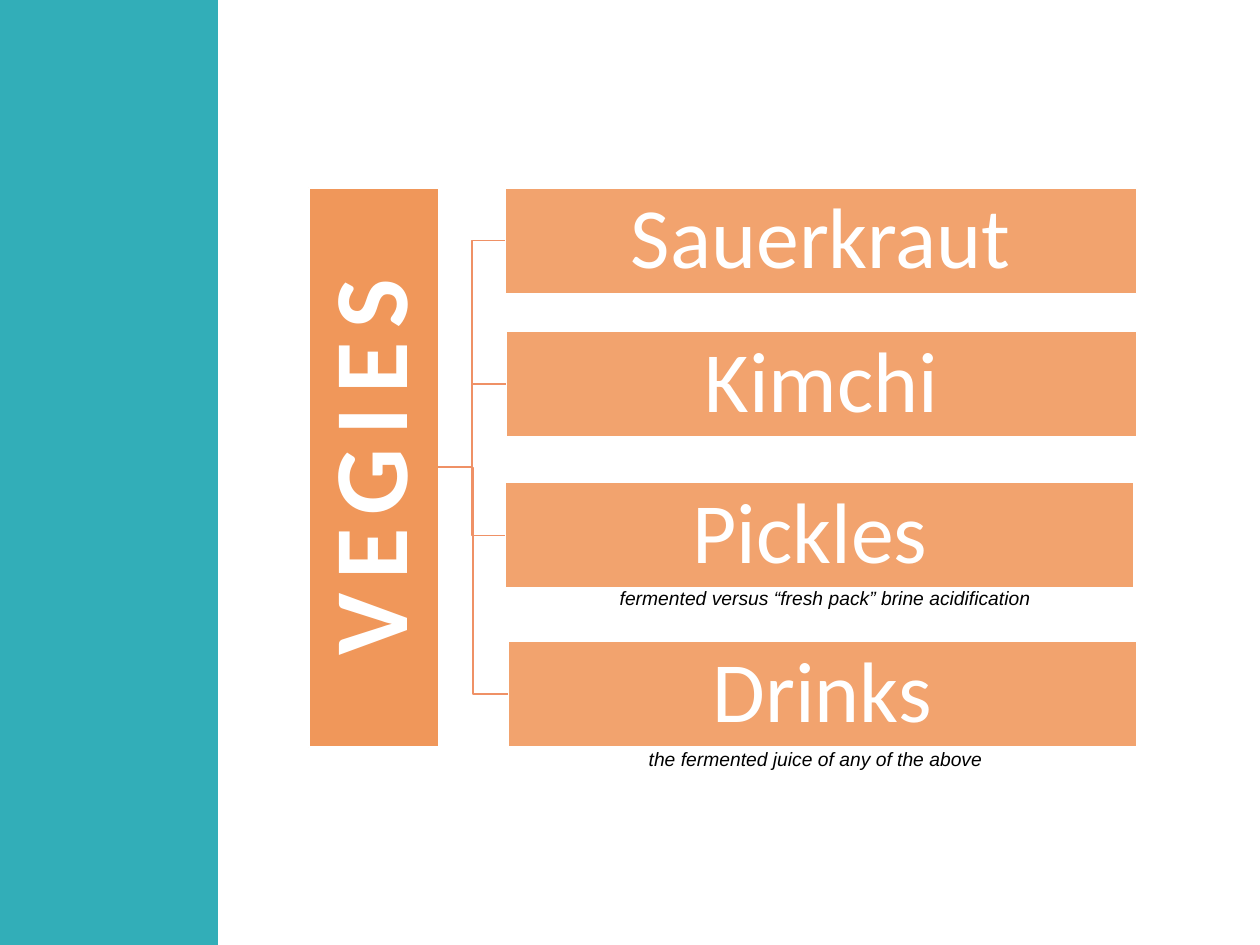
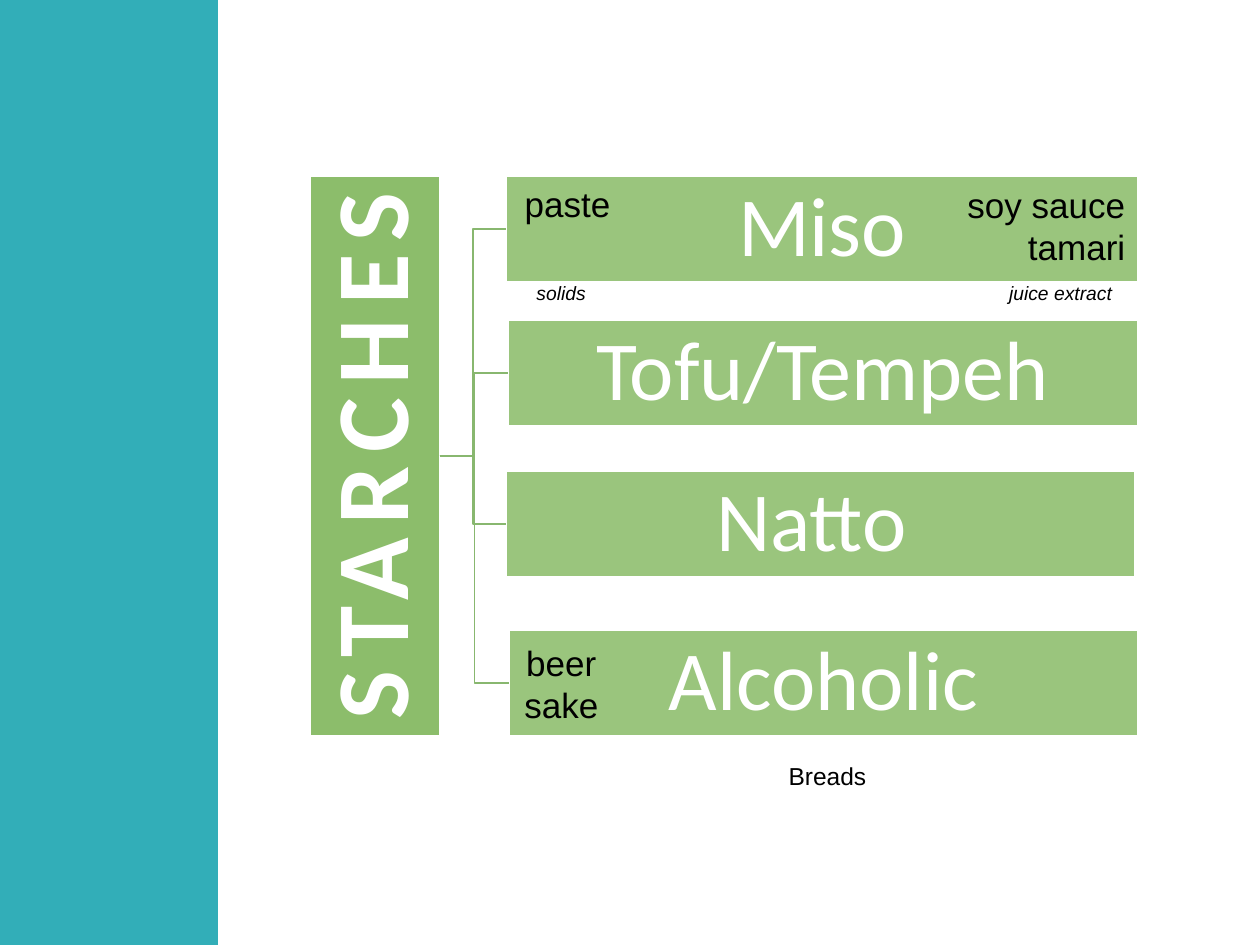
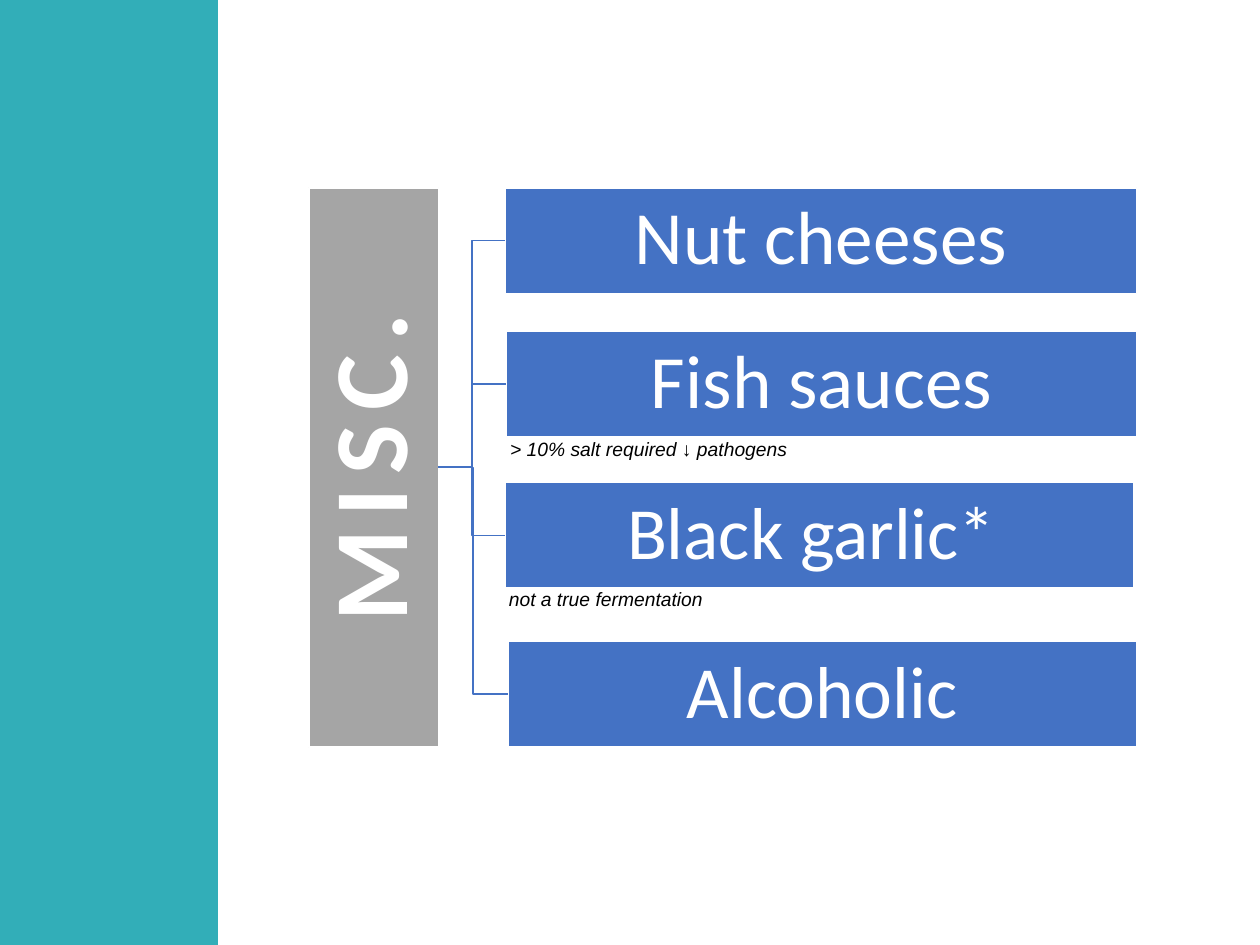
from lxml import etree
from pptx import Presentation
from pptx.dml.color import RGBColor
from pptx.enum.shapes import MSO_CONNECTOR, MSO_SHAPE
from pptx.enum.text import MSO_ANCHOR, PP_ALIGN
from pptx.oxml.ns import qn
from pptx.util import Inches, Pt

RECT = MSO_SHAPE.RECTANGLE
ELBOW = MSO_CONNECTOR.ELBOW
MIDDLE = MSO_ANCHOR.MIDDLE
LEFT, CENTER, RIGHT = PP_ALIGN.LEFT, PP_ALIGN.CENTER, PP_ALIGN.RIGHT
ROOT_SITE, BAR_SITE = 3, 1

HEX = {
    "band": "32AEB8", "white": "FFFFFF", "black": "000000",
    "orange": "ED7D31", "coral": "EF9166",
    "green": "70AD47", "leaf": "88B76F",
    "gray": "A5A5A5", "blue": "4472C4",
}

# Root size, and bars as x, y, width from the root's corner
ROOT_W, ROOT_H, BAR_H = 1.03, 4.44, 0.84
BARS = [(1.56, 0, 5.01), (1.57, 1.14, 5), (1.56, 2.34, 4.99), (1.58, 3.6, 4.99)]


def rgb(name):
    return RGBColor.from_string(HEX[name])


def write(frame, text, size, font="Arial", color="black", bold=False,
          italic=False, align=LEFT, leading=None, track=0):
    for i, line in enumerate(text.split("\n")):
        para = frame.paragraphs[0] if i == 0 else frame.add_paragraph()
        para.alignment = align
        para.line_spacing = leading
        run = para.add_run()
        run.text = line
        run.font.name, run.font.size = font, Pt(size)
        run.font.bold, run.font.italic = bold, italic
        run.font.color.rgb = rgb(color)
        if track:
            run.font._element.set("spc", str(track * 100))


def block(slide, x, y, w, h, fill, alpha=100, line=None):
    shape = slide.shapes.add_shape(RECT, Inches(x), Inches(y), Inches(w), Inches(h))
    shape.shadow.inherit = False
    shape.fill.solid()
    shape.fill.fore_color.rgb = rgb(fill)
    if alpha < 100:
        tint = shape._element.spPr.find(qn("a:solidFill"))[0]
        etree.SubElement(tint, qn("a:alpha")).set("val", str(alpha * 1000))
    if line:
        shape.line.color.rgb = rgb(line)
        shape.line.width = Pt(1)
    else:
        shape.line.fill.background()
    return shape


def label(shape, text, size, pad, **style):
    frame = shape.text_frame
    frame.word_wrap = True
    frame.vertical_anchor = MIDDLE
    frame.margin_left = frame.margin_right = Inches(pad)
    frame.margin_top = frame.margin_bottom = Inches(pad)
    write(frame, text, size, font="Calibri", color="white", align=CENTER,
          leading=0.9, **style)


def link(slide, root, bar, color):
    line = slide.shapes.add_connector(ELBOW, 0, 0, 0, 0)
    line.begin_connect(root, ROOT_SITE)
    line.end_connect(bar, BAR_SITE)
    line.line.color.rgb = rgb(color)
    line.line.width = Pt(1)
    etree.SubElement(line._element.spPr, qn("a:effectLst"))


def tree(slide, x, y, title, size, items, fills, alphas, wire):
    # Upright heading
    root = block(slide, x, y, ROOT_W, ROOT_H, fills[0], alphas[0], "white")
    root.text_frame._txBody.bodyPr.set("vert", "vert270")
    label(root, title, size, 0.04, bold=True, track=8)
    # Bars, each joined to the heading
    for (dx, dy, w), (text, pts) in zip(BARS, items):
        bar = block(slide, x + dx, y + dy, w, BAR_H, fills[1], alphas[1], "white")
        label(bar, text, pts, 0.03)
        link(slide, root, bar, wire)


def note(slide, x, y, w, h, text, size=11, **style):
    box = slide.shapes.add_textbox(Inches(x), Inches(y), Inches(w), Inches(h))
    box.text_frame.word_wrap = False
    write(box.text_frame, text, size, **style)


def page(deck, x, y, notes, **chart):
    slide = deck.slides.add_slide(deck.slide_layouts[6])
    block(slide, 0, 0, 1.73, 7.5, "band")
    tree(slide, x, y, **chart)
    for dx, dy, w, h, text, style in notes:
        note(slide, x + dx, y + dy, w, h, text, **style)


def main():
    deck = Presentation()
    deck.slide_width, deck.slide_height = Inches(10), Inches(7.5)
    small = {"italic": True}
    mid = {"size": 20, "align": CENTER}
    end = {"size": 20, "align": RIGHT}

    # Vegetables
    page(deck, 2.45, 1.49, [
        (2.37, 3.11, 3.53, 0.29,
         "fermented versus “fresh pack” brine acidification", small),
        (2.6, 4.39, 2.91, 0.29, "the fermented juice of any of the above", small),
    ], title="VEGIES", size=60, fills=("orange", "orange"), alphas=(80, 70),
        wire="coral",
        items=[("Sauerkraut", 49), ("Kimchi", 49), ("Pickles ", 49), ("Drinks", 49)])

    # Starches
    page(deck, 2.46, 1.4, [
        (1.6, 3.64, 0.79, 0.77, "beer\nsake", mid),
        (1.6, 0, 0.89, 0.44, "paste", mid),
        (5.06, 0.01, 1.51, 0.77, "soy sauce\ntamari", end),
        (1.7, 0.78, 0.6, 0.29, "solids", small),
        (5.45, 0.78, 1.02, 0.29, "juice extract", small),
        (3.7, 4.59, 0.82, 0.34, "Breads", {"size": 14}),
    ], title="STARCHES", size=59, fills=("green", "green"), alphas=(80, 70),
        wire="leaf",
        items=[("Miso", 48), ("Tofu/Tempeh", 48), ("Natto ", 48), ("Alcoholic", 48)])

    # Miscellaneous
    page(deck, 2.45, 1.49, [
        (1.49, 3.12, 1.77, 0.29, "not a true fermentation", small),
        (1.5, 1.93, 2.5, 0.29, "> 10% salt required ↓ pathogens", small),
    ], title="MISC.", size=60, fills=("gray", "blue"), alphas=(100, 100),
        wire="blue",
        items=[("Nut cheeses", 43), ("Fish sauces", 43),
               ("Black garlic* ", 42), ("Alcoholic", 42)])

    deck.save("out.pptx")


if __name__ == "__main__":
    main()
